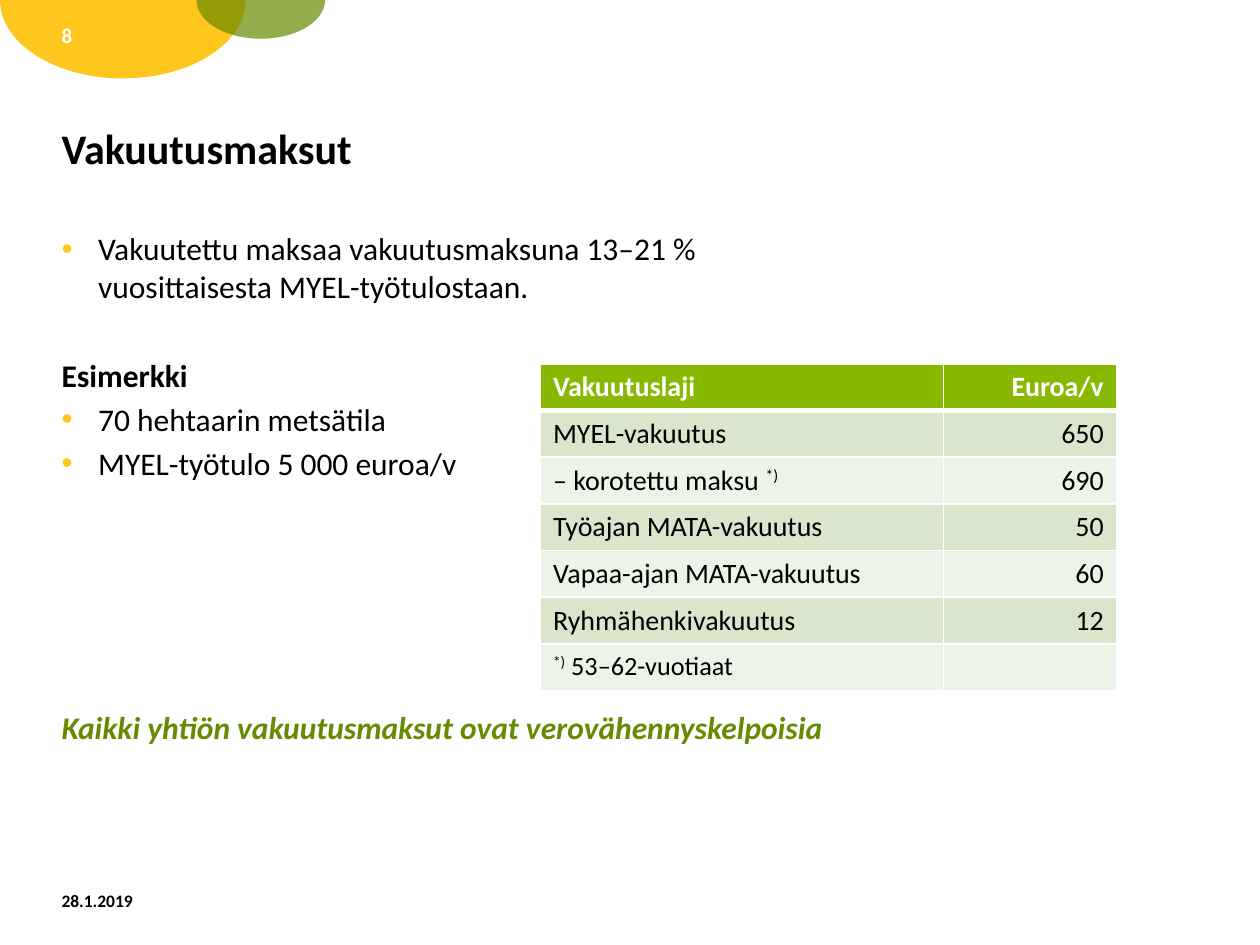
import math
import pptx
import pptx.util
import pptx.dml.color
import pptx.enum.text
import pptx.oxml
import pptx.oxml.ns

Pt = pptx.util.Pt
qn = pptx.oxml.ns.qn
WIDE, HIGH = pptx.util.Inches(10), pptx.util.Inches(7.5)
LEFT, MID = 0.039, pptx.enum.text.MSO_ANCHOR.MIDDLE
RIGHT = pptx.enum.text.PP_ALIGN.RIGHT
GOLD, LEAF, DARK = "FFC61E", "668A00", "000000"


def color(code):
    return pptx.dml.color.RGBColor.from_string(code)


def share(x, y, w, h):
    """Turn shares of the slide into lengths."""
    return [int(x * WIDE), int(y * HIGH), int(w * WIDE), int(h * HIGH)]


def style(font, look):
    base = {"name": "Calibri", "size": Pt(18), "bold": False, "italic": False}
    for key, value in {**base, **look}.items():
        if key == "color":
            font.color.rgb = color(value)
        else:
            setattr(font, key, value)


def write(para, text, look):
    para.text = text
    for run in para.runs:
        style(run.font, {"color": DARK, **look})


def frame(slide, box, anchor):
    area = slide.shapes.add_textbox(*box).text_frame
    area.word_wrap, area.vertical_anchor = True, anchor
    return area


def label(slide, box, text, look):
    write(frame(slide, box, MID).paragraphs[0], text, look)


def bowl(slide, box, fill, alpha=100):
    """Lower half of an ellipse that fills the box."""
    x, y, w, h = box
    steps = 60
    arc = [(x + w / 2 * (1 - math.cos(math.pi * i / steps)),
            y + h * math.sin(math.pi * i / steps)) for i in range(steps + 1)]
    path = slide.shapes.build_freeform(*arc[0])
    path.add_line_segments(arc[1:], close=True)
    shape = path.convert_to_shape()
    shape.shadow.inherit = False
    shape.fill.solid()
    shape.fill.fore_color.rgb = color(fill)
    shape.line.fill.background()
    if alpha < 100:
        tint = shape.fill._xPr.find(qn("a:solidFill"))[0]
        tint.append(pptx.oxml.parse_xml(
            f'<a:alpha {pptx.oxml.ns.nsdecls("a")} val="{alpha * 1000}"/>'))


def bullet(para):
    props = para._p.get_or_add_pPr()
    indent = pptx.util.Inches(0.29)
    props.set("marL", str(indent))
    props.set("indent", str(-indent))
    space = pptx.oxml.ns.nsdecls("a")
    for part in (f'<a:buClr {space}><a:srgbClr val="{GOLD}"/></a:buClr>',
                 f'<a:buFont {space} typeface="Arial"/>',
                 f'<a:buChar {space} char="•"/>'):
        props.append(pptx.oxml.parse_xml(part))


def body(slide, box, lines):
    area = frame(slide, box, pptx.enum.text.MSO_ANCHOR.TOP)
    for i, (text, dot, gap, look) in enumerate(lines):
        para = area.add_paragraph() if i else area.paragraphs[0]
        para.line_spacing = Pt(21.2)
        if gap:
            para.space_before = Pt(gap)
        if dot:
            bullet(para)
        write(para, text, look)


def edge(cell, sides):
    """White cell borders, widths in points by side."""
    props = cell._tc.get_or_add_tcPr()
    for i, (side, width) in enumerate(sides.items()):
        props.insert(i, pptx.oxml.parse_xml(
            f'<a:ln{side} {pptx.oxml.ns.nsdecls("a")} w="{Pt(width)}"><a:solidFill>'
            f'<a:srgbClr val="FFFFFF"/></a:solidFill></a:ln{side}>'))


def entry(cell, parts, look):
    """Fill a cell with runs; a part that starts with ^ is raised."""
    para = cell.text_frame.paragraphs[0]
    for part in parts:
        run = para.add_run()
        run.text = part.lstrip("^")
        style(run.font, look)
        if part.startswith("^"):
            run.font._element.set("baseline", "30000")
    if not parts:
        para._p.append(pptx.oxml.parse_xml(
            f'<a:endParaRPr {pptx.oxml.ns.nsdecls("a")} '
            f'sz="{int(look["size"].pt * 100)}"/>'))
    return para


def prices(slide, box, rows):
    table = slide.shapes.add_table(len(rows), 2, *box).table
    for col, part in zip(table.columns, (0.7, 0.3)):
        col.width = int(box[2] * part)
    last = len(rows) - 1
    for r, row in enumerate(rows):
        table.rows[r].height = box[3] // len(rows)
        fill = "88B800" if r == 0 else ("EDF3E7", "DAE6CC")[r % 2]
        look = {"size": Pt(15 if r == last else 16), "bold": r == 0,
                "color": DARK if r else "FFFFFF"}
        for c, parts in enumerate(row):
            cell = table.cell(r, c)
            cell.fill.solid()
            cell.fill.fore_color.rgb = color(fill)
            edge(cell, {"L": 1, "R": 1, "T": 3 if r == 1 else 1,
                        "B": 1 if r else 3})
            para = entry(cell, parts, look)
            if c:
                para.alignment = RIGHT


def main():
    deck = pptx.Presentation()
    deck.slide_width, deck.slide_height = WIDE, HIGH
    slide = deck.slides.add_slide(deck.slide_layouts[6])

    # Corner shapes
    bowl(slide, share(0, 0, 0.195, 0.083), GOLD)
    bowl(slide, share(0.156, 0, 0.102, 0.041), LEAF, 70)

    # Title, date and page number
    label(slide, share(LEFT, 0.099, 0.922, 0.115), "Vakuutusmaksut",
          {"size": Pt(24), "bold": True})
    label(slide, share(LEFT, 0.927, 0.091, 0.053), "28.1.2019",
          {"size": Pt(10), "bold": True})
    label(slide, share(LEFT, 0.011, 0.063, 0.053), "8",
          {"size": Pt(12), "bold": True, "color": "FFFFFF"})

    # Body: text, bullet, space before, look
    body(slide, share(LEFT, 0.237, 0.922, 0.65), [
        ("Vakuutettu maksaa vakuutusmaksuna 13–21 %\v"
         "vuosittaisesta MYEL-työtulostaan.", True, 0, {}),
        ("Esimerkki", False, 29.7, {"bold": True}),
        ("70 hehtaarin metsätila", True, 3.9, {}),
        ("MYEL-työtulo 5 000 euroa/v", True, 3.9, {}),
        ("Kaikki yhtiön vakuutusmaksut ovat verovähennyskelpoisia", False,
         129.7, {"bold": True, "italic": True, "color": LEAF})])

    # Price table
    prices(slide, share(0.429, 0.385, 0.457, 0.346), [
        (["Vakuutuslaji"], ["Euroa/v"]),
        (["MYEL-vakuutus"], ["650"]),
        (["– korotettu maksu ", "^*)"], ["690"]),
        (["Työajan MATA-vakuutus"], ["50"]),
        (["Vapaa-ajan MATA-vakuutus"], ["60"]),
        (["Ryhmähenkivakuutus"], ["12"]),
        (["^*)", " 53–62-vuotiaat"], [])])

    deck.save("out.pptx")


if __name__ == "__main__":
    main()
